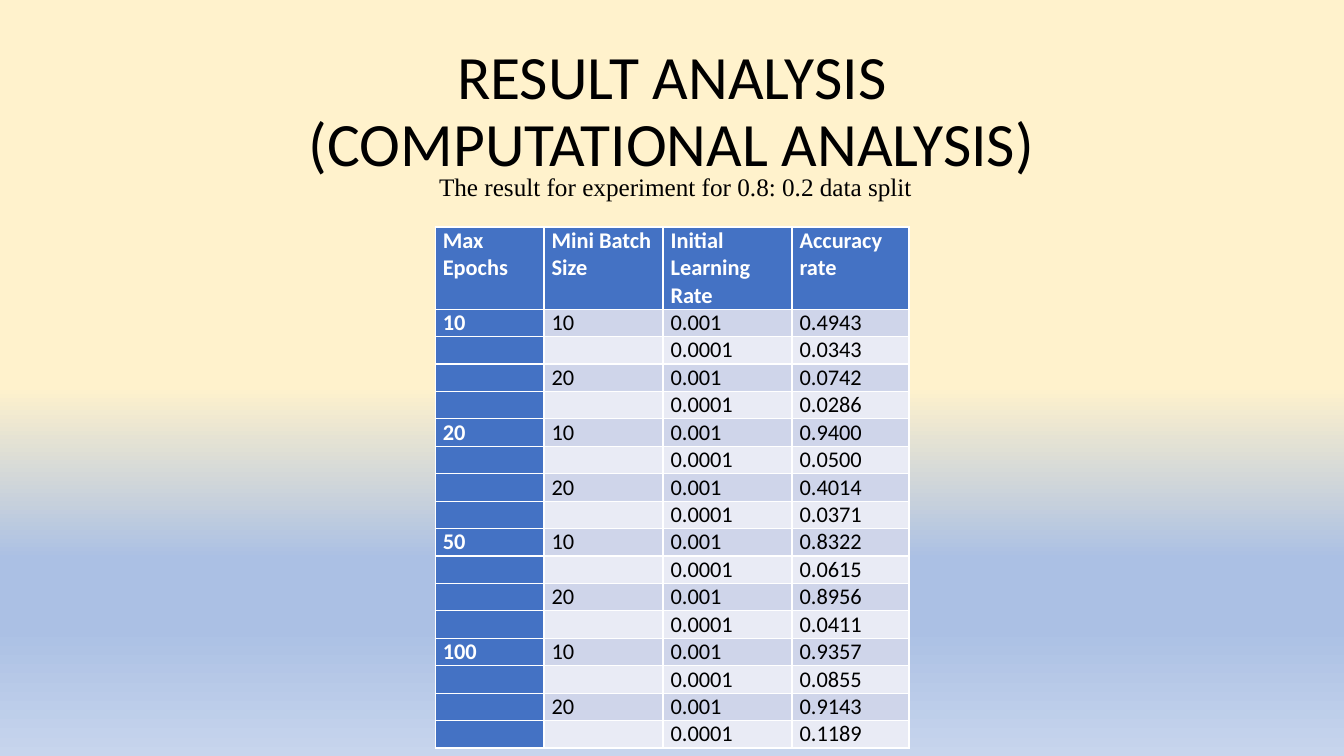
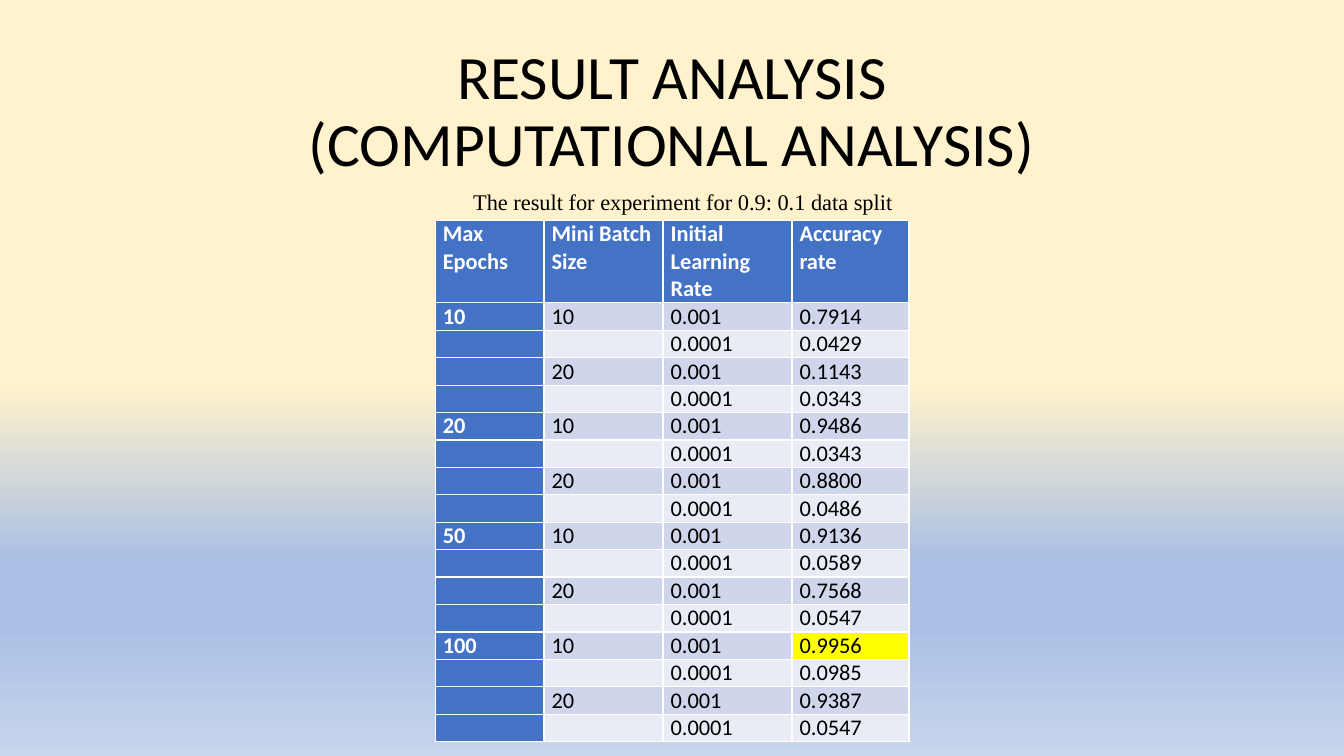
from dataclasses import dataclass

from pptx import Presentation
from pptx.dml.color import RGBColor
from pptx.enum.text import MSO_ANCHOR, MSO_AUTO_SIZE, PP_ALIGN
from pptx.oxml import parse_xml
from pptx.oxml.ns import nsdecls, qn
from pptx.util import Cm, Pt

BLACK, WHITE, BLUE, MARK = "000000", "FFFFFF", "4472C4", "FFFF00"
BANDS = ("CFD5EA", "E9EBF5")
STOPS = ((51, "FFF2CC"), (74, "ABC0E4"), (83, "ABC0E4"), (100, "C7D5ED"))
TITLE = "RESULT ANALYSIS\v(COMPUTATIONAL ANALYSIS)"
HEADS = ("Max Epochs", "Mini Batch Size", "Initial Learning Rate", "Accuracy rate")
WIDTHS = (2.74, 3, 3.25, 2.95)
EPOCHS = (10, 20, 50, 100)
SIZES = (10, 20)
RATES = ("0.001", "0.0001")
HEAD, ROW = 2.03, 0.68


@dataclass
class Box:
    left: float
    top: float
    width: float
    height: float

    def cm(self) -> tuple:
        return Cm(self.left), Cm(self.top), Cm(self.width), Cm(self.height)


@dataclass
class Page:
    split: str
    points: int
    label: Box
    top: float
    scores: str
    best: str = ""


PAGES = (
    Page("0.8: 0.2", 18, Box(9.47, 4.19, 13.84, 1.02), 5.72,
         "0.4943 0.0343 0.0742 0.0286 0.9400 0.0500 0.4014 0.0371 "
         "0.8322 0.0615 0.8956 0.0411 0.9357 0.0855 0.9143 0.1189"),
    Page("0.9: 0.1", 16, Box(10.24, 4.62, 12.67, 0.94), 5.56,
         "0.7914 0.0429 0.1143 0.0343 0.9486 0.0343 0.8800 0.0486 "
         "0.9136 0.0589 0.7568 0.0547 0.9956 0.0985 0.9387 0.0547",
         best="0.9956"),
)


def rgb(code: str) -> RGBColor:
    return RGBColor.from_string(code)


def write(frame, text: str, size: int = 16, face: str = "Calibri",
          color: str = BLACK, bold: bool = False, align=PP_ALIGN.LEFT,
          lead: float = 1.0, indent: float = 0) -> None:
    frame.text = text
    para = frame.paragraphs[0]
    para.alignment, para.line_spacing = align, lead
    if indent:
        para._p.get_or_add_pPr().set("indent", str(Cm(indent)))
    for run in para.runs:
        font = run.font
        font.size, font.name, font.bold = Pt(size), face, bold
        font.color.rgb = rgb(color)
    if not text:
        para._p.get_or_add_endParaRPr().set("sz", str(size * 100))


def paint(master) -> None:
    fill = master.background.fill
    fill.gradient()
    fill.gradient_angle = 270
    stops = master.element.find(".//" + qn("a:gsLst"))
    for old in list(stops):
        stops.remove(old)
    for place, code in STOPS:
        stops.append(parse_xml(
            f'<a:gs {nsdecls("a")} pos="{place * 1000}"><a:srgbClr val="{code}"/></a:gs>'))


def grid(scores: str) -> list[tuple]:
    marks = iter(scores.split())
    rows = [HEADS]
    for epoch in EPOCHS:
        for size in SIZES:
            for rate in RATES:
                first = rate == RATES[0]
                rows.append((str(epoch) if first and size == SIZES[0] else "",
                             str(size) if first else "", rate, next(marks)))
    return rows


def draw_table(slide, page: Page) -> None:
    rows = grid(page.scores)
    box = Box(10.97, page.top, sum(WIDTHS), HEAD + ROW * (len(rows) - 1))
    table = slide.shapes.add_table(len(rows), len(WIDTHS), *box.cm()).table
    table.first_col = True
    for col, width in zip(table.columns, WIDTHS):
        col.width = Cm(width)
    for r, texts in enumerate(rows):
        table.rows[r].height = Cm(ROW if r else HEAD)
        for c, text in enumerate(texts):
            cell = table.cell(r, c)
            head = r == 0 or c == 0
            cell.margin_left = cell.margin_right = Cm(0.19)
            cell.margin_top = cell.margin_bottom = 0
            write(cell.text_frame, text, color=WHITE if head else BLACK, bold=head)
            tint = BLUE if head else BANDS[(r - 1) % 2]
            cell.fill.solid()
            cell.fill.fore_color.rgb = rgb(MARK if text and text == page.best else tint)


def draw_label(slide, page: Page) -> None:
    frame = slide.shapes.add_textbox(*page.label.cm()).text_frame
    frame.word_wrap = False
    frame.auto_size = MSO_AUTO_SIZE.SHAPE_TO_FIT_TEXT
    frame.vertical_anchor = MSO_ANCHOR.MIDDLE
    write(frame, f"The result for experiment for {page.split} data split",
          size=page.points, face="Times New Roman", align=PP_ALIGN.CENTER, indent=1.27)


def draw_page(deck, page: Page) -> None:
    slide = deck.slides.add_slide(deck.slide_layouts[5])
    title = slide.shapes.title
    title.left, title.top, title.width, title.height = Box(2.33, 1.01, 29.21, 3.68).cm()
    title.text_frame.vertical_anchor = MSO_ANCHOR.MIDDLE
    write(title.text_frame, TITLE, size=44, align=PP_ALIGN.CENTER, lead=0.9)
    draw_table(slide, page)
    draw_label(slide, page)


def main() -> None:
    deck = Presentation()
    deck.slide_width, deck.slide_height = Cm(33.87), Cm(19.05)
    paint(deck.slide_master)
    for page in PAGES:
        draw_page(deck, page)
    deck.save("out.pptx")


if __name__ == "__main__":
    main()
